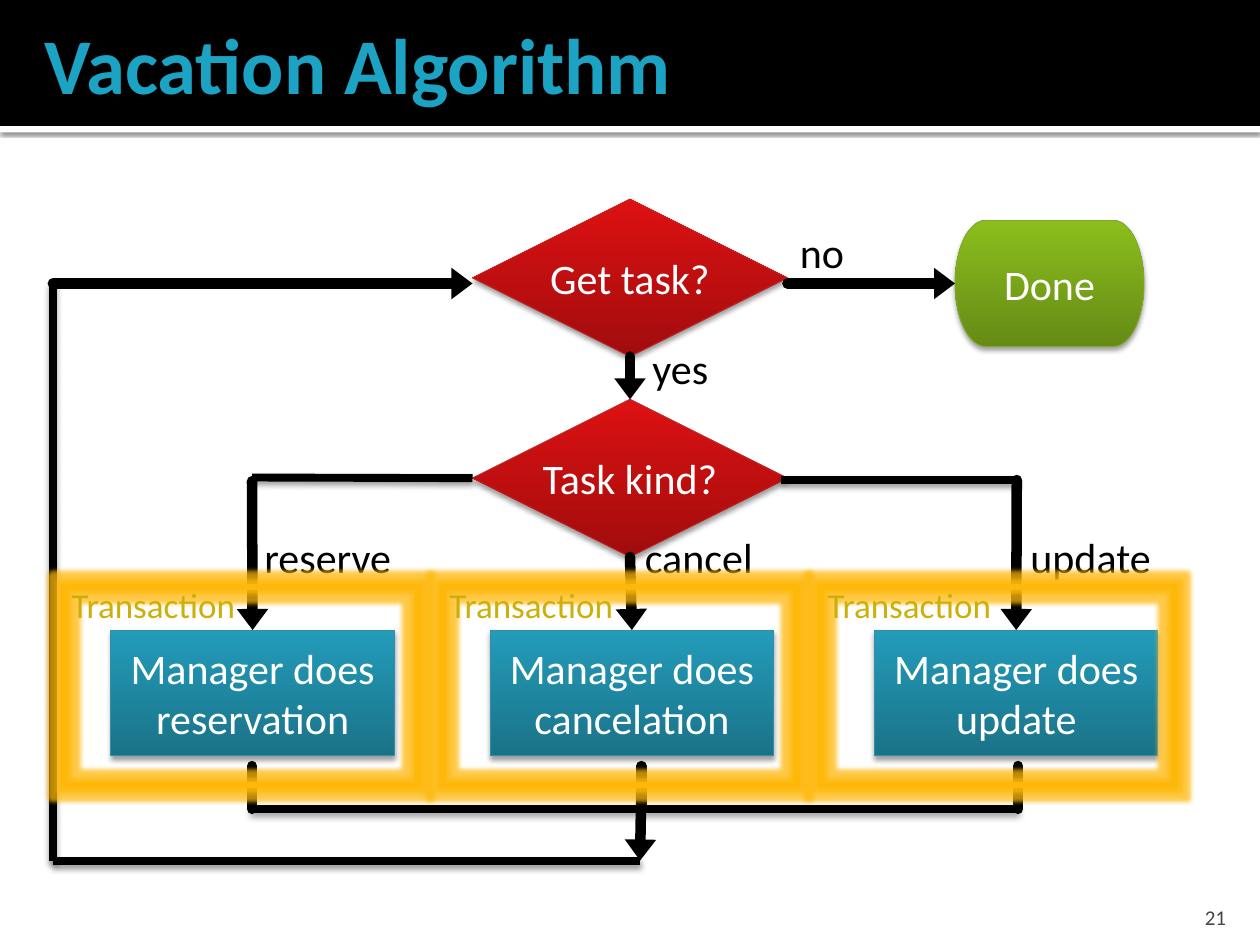
from typing import NamedTuple, Optional

import pptx
import pptx.dml.color
import pptx.enum.shapes
import pptx.enum.text
import pptx.oxml
import pptx.oxml.ns
import pptx.util

Inches, Pt = pptx.util.Inches, pptx.util.Pt
RGBColor = pptx.dml.color.RGBColor
Shape = pptx.enum.shapes.MSO_SHAPE
Align = pptx.enum.text.PP_ALIGN
Anchor = pptx.enum.text.MSO_ANCHOR

FONT = "Calibri"
BLACK = RGBColor(0x00, 0x00, 0x00)
WHITE = RGBColor(0xFF, 0xFF, 0xFF)
TITLE_BLUE = RGBColor(0x1C, 0xA2, 0xC3)
PAGE_GRAY = RGBColor(0x45, 0x45, 0x45)
GLOW_AMBER = RGBColor(0xFE, 0xB8, 0x0A)
TRANSACTION_GOLD = RGBColor(0xCC, 0xAF, 0x0A)

TOP, LEFT, BOTTOM, RIGHT = range(4)


class Palette(NamedTuple):
    dark: RGBColor
    light: RGBColor
    edge: RGBColor


RED = Palette(RGBColor(0xA1, 0x0C, 0x0D), RGBColor(0xDD, 0x11, 0x12), RGBColor(0xC2, 0x28, 0x29))
TEAL = Palette(RGBColor(0x1A, 0x72, 0x88), RGBColor(0x23, 0x9C, 0xBA), RGBColor(0x34, 0x8F, 0xA6))
GREEN = Palette(RGBColor(0x65, 0x8B, 0x15), RGBColor(0x8B, 0xBE, 0x1D), RGBColor(0x82, 0xA9, 0x2F))


class Node(NamedTuple):
    text: str
    kind: Shape
    box: tuple
    palette: Palette
    wrap: bool = True


class Link(NamedTuple):
    start: tuple
    end: tuple
    arrow: bool = False
    source: Optional[tuple] = None  # (node name, side)
    target: Optional[tuple] = None


class Label(NamedTuple):
    text: str
    box: tuple
    size: float = 24
    color: RGBColor = BLACK
    align: Align = Align.LEFT
    anchor: Anchor = Anchor.TOP
    bottom_inset: float = 0.05


NODES = {
    "get": Node("Get task?", Shape.FLOWCHART_DECISION, (3.75, 1.58, 2.5, 1.25), RED, False),
    "kind": Node("Task kind?", Shape.FLOWCHART_DECISION, (3.75, 3.17, 2.5, 1.25), RED, False),
    "done": Node("Done", Shape.FLOWCHART_TERMINATOR, (7.58, 1.75, 1.5, 1), GREEN),
    "reserve": Node("Manager does reservation", Shape.RECTANGLE, (0.88, 5, 2.25, 1), TEAL),
    "cancel": Node("Manager does cancelation", Shape.RECTANGLE, (3.89, 5, 2.25, 1), TEAL),
    "update": Node("Manager does update", Shape.RECTANGLE, (6.94, 5, 2.25, 1), TEAL),
}

# Thin lines carry a shadow, thick ones have round caps
THIN_LINKS = [
    Link((0.42, 2.25), (0.42, 6.83)),
    Link((5.08, 6.83), (0.42, 6.83)),
    Link((8.08, 6.42), (1.98, 6.42)),
    Link((3.75, 3.79), (2, 3.79), source=("kind", LEFT)),
    Link((8.08, 3.81), (6.2, 3.81)),
]
THICK_LINKS = [
    Link((0.42, 2.25), (3.75, 2.25), True),
    Link((6.25, 2.25), (7.58, 2.25), True, target=("done", LEFT)),
    Link((5, 2.83), (5, 3.17), True, ("get", BOTTOM), ("kind", TOP)),
    Link((2, 3.82), (2, 5), True, target=("reserve", TOP)),
    Link((5, 4.42), (5.01, 5), True, ("kind", BOTTOM), ("cancel", TOP)),
    Link((8.07, 3.81), (8.07, 5), True, target=("update", TOP)),
    Link((5.09, 6.25), (5.08, 6.83), True),
] + [Link((x, 6.08), (x, 6.42)) for x in (2, 5.09, 8.08)]

LABELS = [
    Label("no", (6.25, 1.75, 0.56, 0.5)),
    Label("yes", (5.08, 2.67, 0.65, 0.5)),
    Label("reserve", (2, 4.17, 1.22, 0.5)),
    Label("cancel", (5.02, 4.17, 1.07, 0.5)),
    Label("update", (8.08, 4.17, 1.17, 0.5)),
]


def inches(values: tuple) -> list:
    return [Inches(value) for value in values]


def add_effect(item, xml: str = "") -> None:
    """Give the item its own effect list, empty unless xml is passed."""
    properties = item._element.spPr
    for old in properties.findall(pptx.oxml.ns.qn("a:effectLst")):
        properties.remove(old)
    properties.append(pptx.oxml.parse_xml(
        f'<a:effectLst {pptx.oxml.ns.nsdecls("a")}>{xml}</a:effectLst>'))


def shadow_xml(alpha: int, blur: float, distance: float) -> str:
    return (f'<a:outerShdw blurRad="{Pt(blur)}" dist="{Pt(distance)}" dir="5400000" '
            f'rotWithShape="0"><a:srgbClr val="{BLACK}"><a:alpha val="{alpha * 1000}"/>'
            f'</a:srgbClr></a:outerShdw>')


def style_text(frame, text: str, size: float, color: RGBColor,
               align: Align, bold: bool = False) -> None:
    frame.text = text
    paragraph = frame.paragraphs[0]
    paragraph.alignment = align
    font = paragraph.runs[0].font
    font.name, font.size, font.bold = FONT, Pt(size), bold
    font.color.rgb = color


def add_bar(shapes, box: tuple, color: RGBColor, effect: str = "") -> None:
    bar = shapes.add_shape(Shape.RECTANGLE, *inches(box))
    bar.fill.solid()
    bar.fill.fore_color.rgb = color
    bar.line.fill.background()
    add_effect(bar, effect)


def add_node(shapes, node: Node):
    shape = shapes.add_shape(node.kind, *inches(node.box))
    shape.fill.gradient()
    shape.fill.gradient_angle = 90
    for stop, color in zip(shape.fill.gradient_stops, (node.palette.dark, node.palette.light)):
        stop.color.rgb = color
    shape.line.color.rgb = node.palette.edge
    shape.line.width = Pt(0.5)
    add_effect(shape, shadow_xml(38, 3.1, 2))
    shape.text_frame.word_wrap = node.wrap
    shape.text_frame.vertical_anchor = Anchor.MIDDLE
    style_text(shape.text_frame, node.text, 24, WHITE, Align.CENTER)
    return shape


def add_link(shapes, link: Link, nodes: dict, width: float, cap: str, effect: str = "") -> None:
    line = shapes.add_connector(pptx.enum.shapes.MSO_CONNECTOR.STRAIGHT,
                                *inches(link.start + link.end))
    if link.source:
        line.begin_connect(nodes[link.source[0]], link.source[1])
    if link.target:
        line.end_connect(nodes[link.target[0]], link.target[1])
    line.line.color.rgb = BLACK
    line.line.width = Pt(width)
    stroke = line.line._get_or_add_ln()
    stroke.set("cap", cap)
    if link.arrow:
        stroke.append(pptx.oxml.parse_xml(
            f'<a:tailEnd {pptx.oxml.ns.nsdecls("a")} type="triangle" len="sm"/>'))
    add_effect(line, effect)


def add_label(shapes, label: Label) -> None:
    frame = shapes.add_textbox(*inches(label.box)).text_frame
    frame.word_wrap = False
    frame.vertical_anchor = label.anchor
    frame.margin_bottom = Inches(label.bottom_inset)
    style_text(frame, label.text, label.size, label.color, label.align)


def add_transaction(shapes, left: float) -> None:
    group = shapes.add_group_shape().shapes
    frame = group.add_shape(Shape.RECTANGLE, *inches((left + 0.04, 4.66, 2.81, 1.57)))
    frame.fill.background()
    frame.line.color.rgb = GLOW_AMBER
    frame.line.width = Pt(3.78)
    add_effect(frame, f'<a:glow rad="{Pt(5)}"><a:srgbClr val="{GLOW_AMBER}">'
                      f'<a:alpha val="75000"/></a:srgbClr></a:glow>')
    add_label(group, Label("Transaction", (left, 4.58, 1.51, 0.44), 20, TRANSACTION_GOLD))


def main() -> None:
    deck = pptx.Presentation()
    deck.slide_width, deck.slide_height = Inches(10), Inches(7.5)
    slide = deck.slides.add_slide(deck.slide_layouts[5])
    shapes = slide.shapes

    # Header bars, with the title in front of them
    add_bar(shapes, (0, 1, 10, 0.05), WHITE, shadow_xml(60, 2.5, 0.8))
    add_bar(shapes, (0, 0, 10, 1), BLACK)
    title = shapes.title
    shapes._spTree.append(title._element)
    title.left, title.top, title.width, title.height = inches((0.25, 0, 9.5, 1))
    title.text_frame.auto_size = pptx.enum.text.MSO_AUTO_SIZE.NONE
    title.text_frame.vertical_anchor = Anchor.MIDDLE
    style_text(title.text_frame, "Vacation Algorithm", 45, TITLE_BLUE, Align.LEFT, True)

    # Flowchart
    nodes = {name: add_node(shapes, node) for name, node in NODES.items()}
    for link in THICK_LINKS:
        add_link(shapes, link, nodes, 6, "rnd")
    for link in THIN_LINKS:
        add_link(shapes, link, nodes, 4.5, "flat", shadow_xml(38, 3.5, 2))
    for label in LABELS:
        add_label(shapes, label)

    # Transaction frames
    for column in range(3):
        add_transaction(shapes, 0.47 + 3 * column)

    # Page number
    add_label(shapes, Label("21", (8.97, 7.08, 0.86, 0.3), 12, PAGE_GRAY,
                            Align.RIGHT, Anchor.BOTTOM, 0))
    deck.save("out.pptx")


if __name__ == "__main__":
    main()
